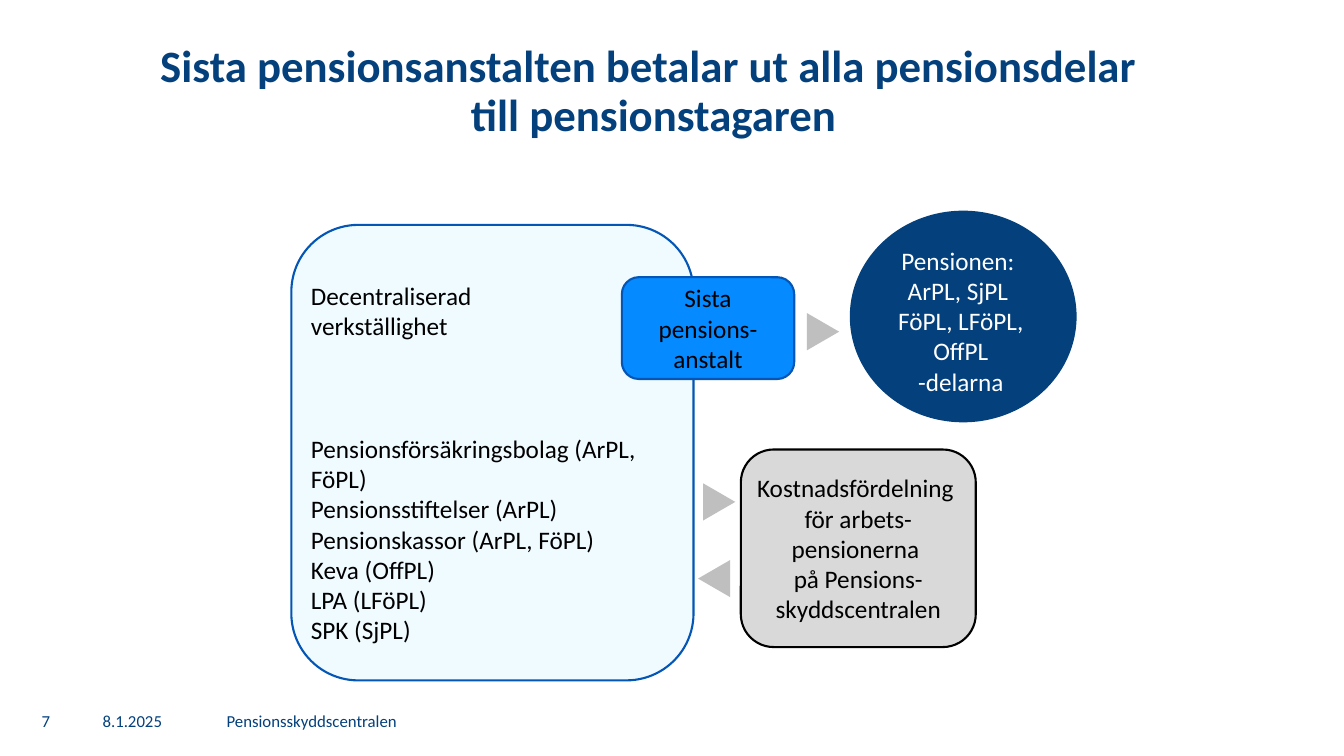
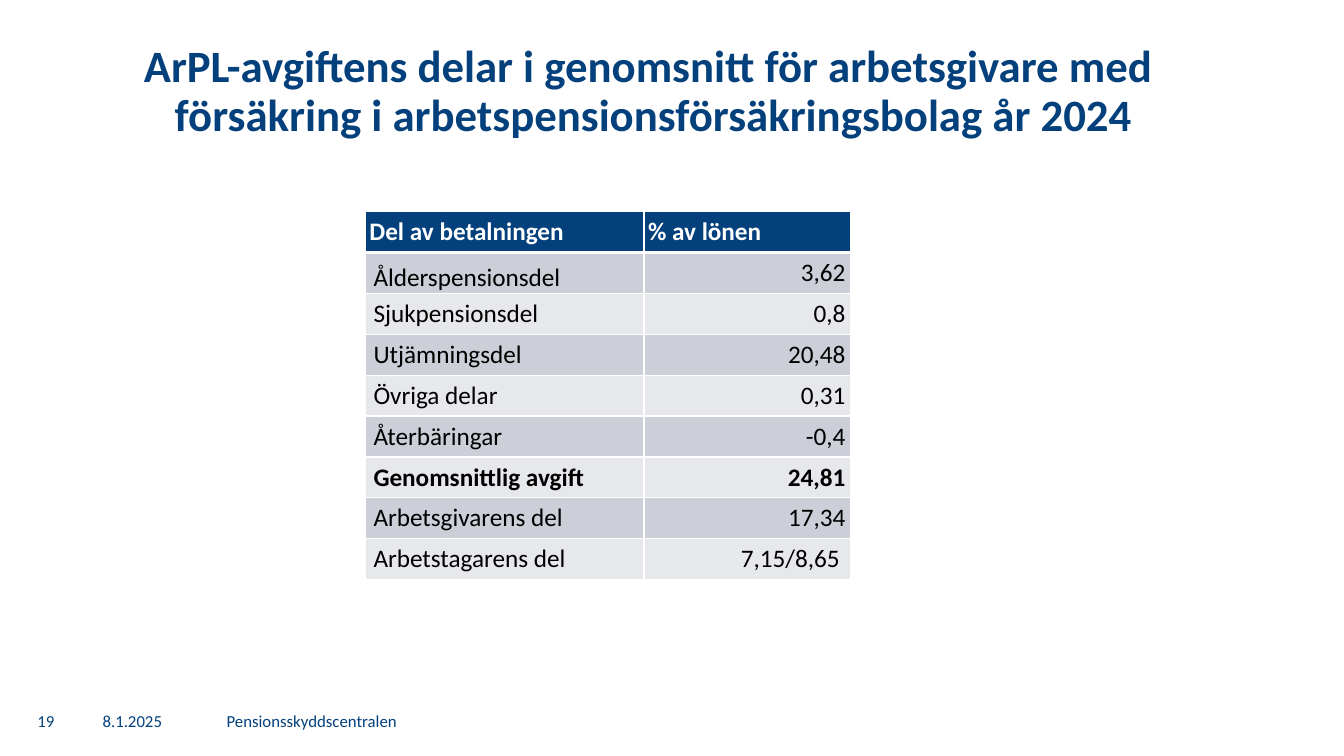
"""Builds two slides on Finnish earnings-related pensions: payment flow and contribution shares."""
from lxml import etree
from pptx import Presentation
from pptx.dml.color import RGBColor
from pptx.enum import shapes, text
from pptx.oxml import ns
from pptx.util import Pt

FONT = "Calibri"
C = dict(navy="03407C", blue="0356B5", bright="058AFF", pale="F0FBFF", grey="D9D9D9",
         arrow="BFBFBF", band1="CCCFD7", band2="E7E8EC", black="000000", white="FFFFFF")
LEFT, CENTER, RIGHT = text.PP_ALIGN.LEFT, text.PP_ALIGN.CENTER, text.PP_ALIGN.RIGHT
TOP, MIDDLE, BOTTOM = (text.MSO_ANCHOR.TOP, text.MSO_ANCHOR.MIDDLE, text.MSO_ANCHOR.BOTTOM)
ROUND, OVAL = shapes.MSO_SHAPE.ROUNDED_RECTANGLE, shapes.MSO_SHAPE.OVAL
MERGE = shapes.MSO_SHAPE.FLOWCHART_MERGE
INSETS = (7.2, 3.6, 7.2, 3.6)
NARROW = (0, 3.6, 0, 3.6)

FLOW_TITLE = "Sista pensionsanstalten betalar ut alla pensionsdelar \ntill pensionstagaren"
FLOW_NUMBER = "7"
EXECUTION = ["Decentraliserad", "verkställighet"]
INSTITUTIONS = ["Pensionsförsäkringsbolag (ArPL, FöPL)", "Pensionsstiftelser (ArPL)",
                "Pensionskassor (ArPL, FöPL)", "Keva (OffPL)", "LPA (LFöPL)", "SPK (SjPL)"]
LAST_INSTITUTION = ["Sista", "pensions-anstalt"]
PENSION = ["Pensionen:\nArPL, SjPL", " FöPL, LFöPL,", " OffPL", " -delarna"]
COST_SHARING = ["Kostnadsfördelning \nför arbets-\npensionerna \npå Pensions-skyddscentralen"]
ARROWS = [(574.6, 225.4, 270), (500.4, 347, 270), (496.8, 401.8, 90)]

SHARES_TITLE = ("ArPL-avgiftens delar i genomsnitt för arbetsgivare med \n"
                "försäkring i arbetspensionsförsäkringsbolag år 2024")
SHARES_NUMBER = "19"
SHARES = [("Del av betalningen", "% av lönen"), ("Ålderspensionsdel", "3,62"),
          ("Sjukpensionsdel", "0,8"), ("Utjämningsdel", "20,48"), ("Övriga delar", "0,31"),
          ("Återbäringar", "-0,4"), ("Genomsnittlig avgift", "24,81"),
          ("Arbetsgivarens del", "17,34"), ("Arbetstagarens del", "7,15/8,65 ")]
TOTAL_ROW = 6
COL_WIDTHS = (199, 147.5)
ROW_HEIGHT = 29.2

FOOTER_TOP, FOOTER_HEIGHT = 500.4, 28.8
FOOTERS = [("8.1.2025", 66.2, 81.4, LEFT, INSETS),
           ("Pensionsskyddscentralen", 154.8, 738.7, LEFT, (7.2, 3.6, 0, 3.6))]


def rgb(name):
    return RGBColor.from_string(C[name])


def set_margins(target, insets):
    (target.margin_left, target.margin_top,
     target.margin_right, target.margin_bottom) = map(Pt, insets)


def write(tf, paragraphs, size=18, color="black", align=CENTER, bold=False):
    for i, content in enumerate(paragraphs):
        p = tf.add_paragraph() if i else tf.paragraphs[0]
        p.alignment = align
        for j, line in enumerate(content.split("\n")):
            if j:
                p.add_line_break()
            r = p.add_run()
            r.text = line
            r.font.name, r.font.size, r.font.bold = FONT, Pt(size), bold
            r.font.color.rgb = rgb(color)
        p.font.size = Pt(size)


def prepare(tf, insets=INSETS, anchor=MIDDLE):
    tf.word_wrap = True
    tf.auto_size = text.MSO_AUTO_SIZE.NONE
    tf.vertical_anchor = anchor
    set_margins(tf, insets)
    return tf


def add_text(s, box, paragraphs, insets=INSETS, anchor=MIDDLE, **style):
    sp = s.shapes.add_textbox(*map(Pt, box))
    write(prepare(sp.text_frame, insets, anchor), paragraphs, **style)


def add_shape(s, kind, box, fill, line=None):
    sp = s.shapes.add_shape(kind, *map(Pt, box))
    sp.shadow.inherit = False
    sp.fill.solid()
    sp.fill.fore_color.rgb = rgb(fill)
    if line:
        sp.line.color.rgb = rgb(line)
        sp.line.width = Pt(1.5)
    else:
        sp.line.fill.background()
    return sp


def add_slide(prs, title, number):
    s = prs.slides.add_slide(prs.slide_layouts[5])
    sp = s.shapes.title
    sp.left, sp.top, sp.width, sp.height = map(Pt, (0, 28, 934, 105))
    write(prepare(sp.text_frame, anchor=TOP), [title], size=32, color="navy", bold=True)
    sp.text_frame.paragraphs[0].line_spacing = 0.9
    for label, left, width, align, insets in FOOTERS + [(number, 14.4, 36.7, CENTER, INSETS)]:
        add_text(s, (left, FOOTER_TOP, width, FOOTER_HEIGHT), [label], insets,
                 size=12, color="navy", align=align)
    return s


def build_flow(prs):
    s = add_slide(prs, FLOW_TITLE, FLOW_NUMBER)
    sp = add_shape(s, ROUND, (208.1, 160.6, 287.3, 325.4), "pale", "blue")
    tf = prepare(sp.text_frame, (0, 25.6, 0, 3.6), TOP)
    write(tf, EXECUTION + INSTITUTIONS, align=LEFT)
    tf.paragraphs[len(EXECUTION)].space_before = Pt(66)
    sp = add_shape(s, ROUND, (444.2, 198, 123.1, 72.7), "bright", "blue")
    write(prepare(sp.text_frame), LAST_INSTITUTION)
    add_shape(s, OVAL, (607, 150.5, 162, 151.2), "navy")
    add_text(s, (602.6, 171.4, 163.4, 116.6), PENSION, anchor=TOP, color="white")
    sp = add_shape(s, ROUND, (529.2, 321.1, 167.8, 141.1), "grey", "black")
    write(prepare(sp.text_frame, NARROW), COST_SHARING)
    for left, top, rotation in ARROWS:
        add_shape(s, MERGE, (left, top, 26.6, 23), "arrow").rotation = rotation


def set_borders(cell, bottom):
    tc_pr = cell._tc.get_or_add_tcPr()
    for i, (side, width) in enumerate(zip("LRTB", (1, 1, 1, bottom))):
        ln = etree.Element(ns.qn(f"a:ln{side}"), w=str(Pt(width)))
        fill = etree.SubElement(ln, ns.qn("a:solidFill"))
        etree.SubElement(fill, ns.qn("a:srgbClr"), val=C["white"])
        tc_pr.insert(i, ln)


def build_shares(prs):
    s = add_slide(prs, SHARES_TITLE, SHARES_NUMBER)
    size = (sum(COL_WIDTHS), ROW_HEIGHT * len(SHARES))
    table = s.shapes.add_table(len(SHARES), 2, *map(Pt, (261, 151.2, *size))).table
    for col, width in zip(table.columns, COL_WIDTHS):
        col.width = Pt(width)
    for i, row in enumerate(SHARES):
        table.rows[i].height = Pt(ROW_HEIGHT)
        header = i == 0
        for j, content in enumerate(row):
            cell = table.cell(i, j)
            cell.fill.solid()
            cell.fill.fore_color.rgb = rgb("navy" if header else "band1" if i % 2 else "band2")
            cell.vertical_anchor = BOTTOM if (i, j) == (1, 0) else MIDDLE
            set_margins(cell, (2.9, 3.6, 2.9, 3.6) if header
                        else (3.6,) * 4 if j else (5.8, 0, 0, 0))
            write(cell.text_frame, [content], color="white" if header else "black",
                  align=RIGHT if j and not header else LEFT, bold=i in (0, TOTAL_ROW))
            set_borders(cell, 3 if header else 1)


def main():
    prs = Presentation()
    prs.slide_width, prs.slide_height = Pt(960), Pt(540)
    build_flow(prs)
    build_shares(prs)
    prs.save("out.pptx")


if __name__ == "__main__":
    main()
